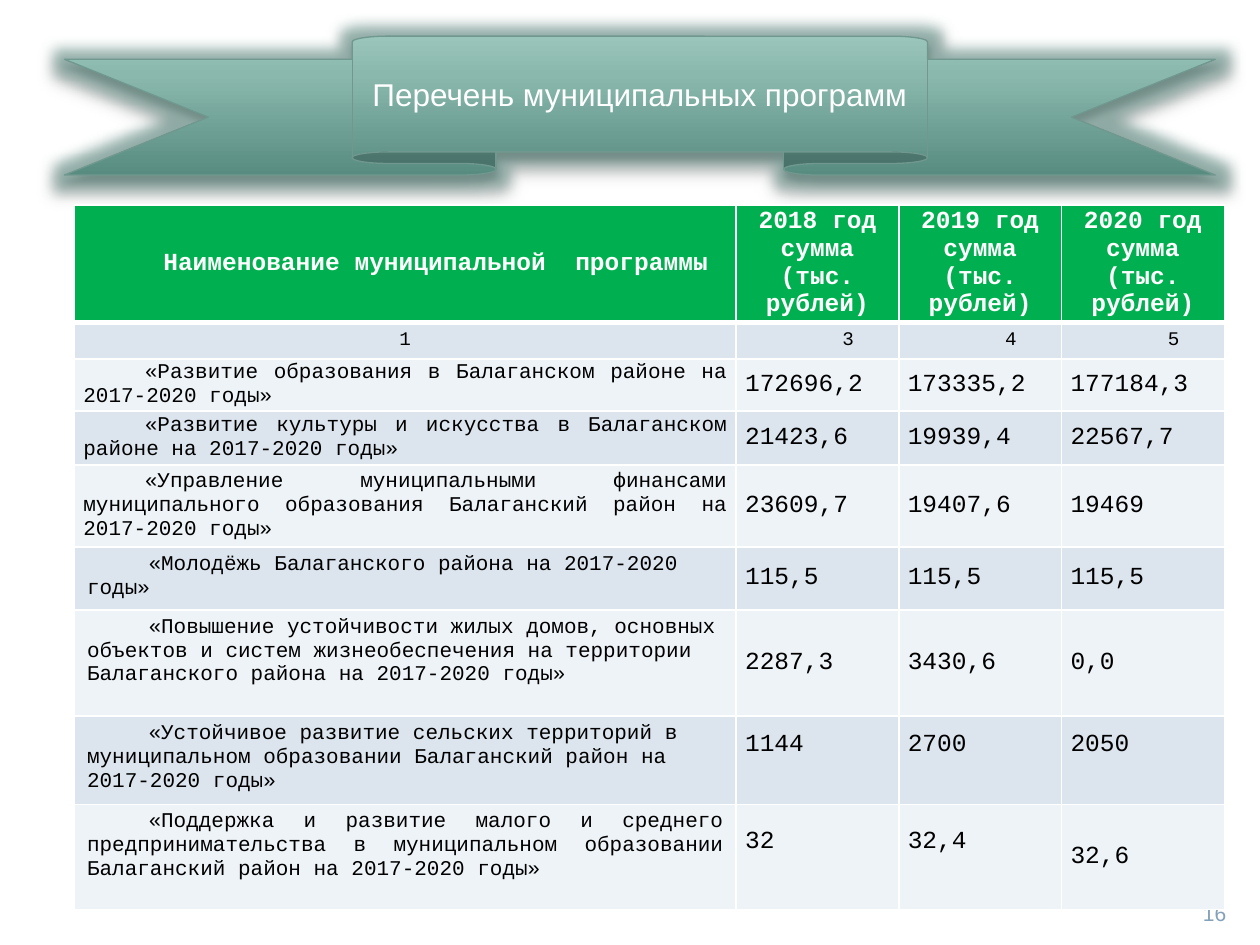
from copy import deepcopy

from lxml import etree
from pptx import Presentation
from pptx.dml.color import RGBColor
from pptx.enum.shapes import MSO_SHAPE
from pptx.enum.text import MSO_ANCHOR, PP_ALIGN
from pptx.oxml.ns import qn
from pptx.util import Cm, Pt

RIBBON = MSO_SHAPE.UP_RIBBON
TOP, MIDDLE, BOTTOM = MSO_ANCHOR.TOP, MSO_ANCHOR.MIDDLE, MSO_ANCHOR.BOTTOM
LEFT, CENTER, RIGHT, JUSTIFY = (
    PP_ALIGN.LEFT, PP_ALIGN.CENTER, PP_ALIGN.RIGHT, PP_ALIGN.JUSTIFY)

WHITE = RGBColor(0xFF, 0xFF, 0xFF)
BLACK = RGBColor(0x00, 0x00, 0x00)
GREEN = RGBColor(0x00, 0xB0, 0x50)
BAND_DARK = RGBColor(0xDC, 0xE5, 0xEE)
BAND_LIGHT = RGBColor(0xEE, 0xF3, 0xF7)
NUMBER_BLUE = RGBColor(0x83, 0xA1, 0xB9)
RIBBON_LINE = RGBColor(0x70, 0x98, 0x8E)
RIBBON_GLOW = RGBColor(0x58, 0x8C, 0x81)
RIBBON_STOPS = [(0, RGBColor(0x58, 0x8C, 0x81)),
                (0.72, RGBColor(0x8A, 0xB8, 0xAD)),
                (1, RGBColor(0x9A, 0xC5, 0xBA))]

SANS, MONO = "Arial", "Courier New"
INDENT = Cm(1.24)
COLUMN_WIDTHS = [13.34, 3.28, 3.28, 3.28]
HEADER_HEIGHT, NUMBERS_HEIGHT = 2.36, 0.73
HEADERS = ["Наименование муниципальной  программы",
           "2018 год сумма\n(тыс.\nрублей)",
           "2019 год\nсумма (тыс.\nрублей)",
           "2020 год\nсумма (тыс.\nрублей)"]
COLUMN_NUMBERS = ["1", "3", "4", "5"]

# height, alignment, whether the name sits at the top, name, sums by year
PROGRAMS = [
    (1.05, JUSTIFY, False,
     "«Развитие образования в Балаганском районе на 2017-2020 годы»",
     ["172696,2", "173335,2", "177184,3"]),
    (1.09, JUSTIFY, False,
     "«Развитие культуры и искусства в Балаганском районе на 2017-2020 годы»",
     ["21423,6", "19939,4", "22567,7"]),
    (1.65, JUSTIFY, False,
     "«Управление муниципальными финансами муниципального образования "
     "Балаганский район на 2017-2020 годы»",
     ["23609,7", "19407,6", "19469"]),
    (1.27, LEFT, True,
     "«Молодёжь Балаганского района на 2017-2020 годы»",
     ["115,5", "115,5", "115,5"]),
    (2.14, LEFT, True,
     "«Повышение устойчивости жилых домов, основных объектов и систем "
     "жизнеобеспечения на территории Балаганского района на 2017-2020 годы»",
     ["2287,3", "3430,6", "0,0"]),
    (1.77, LEFT, True,
     "«Устойчивое развитие сельских территорий в муниципальном образовании "
     "Балаганский район на 2017-2020 годы»",
     ["1144", "2700", "2050"]),
    (2.12, JUSTIFY, True,
     "«Поддержка и развитие малого и среднего предпринимательства в "
     "муниципальном образовании Балаганский район на 2017-2020 годы»",
     ["32", "32,4", "32,6"]),
]
RAISED_SUMS = {"1144", "2700", "2050", "32", "32,4"}


def write_text(frame, text, *, size, color, font=MONO, bold=False,
               align=LEFT, indent=0):
    """Fill a text frame, one paragraph for each line of text."""
    for index, line in enumerate(text.split("\n")):
        para = frame.add_paragraph() if index else frame.paragraphs[0]
        para.alignment = align
        if indent:
            properties = para._p.get_or_add_pPr()
            properties.set("marL", "0")
            properties.set("indent", str(int(indent)))
        span = para.add_run()
        span.text = line
        span.font.name, span.font.size = font, Pt(size)
        span.font.bold, span.font.color.rgb = bold, color


def add_effect(parent, tag, color, alpha, **attributes):
    effect = etree.SubElement(parent, qn(tag), attributes)
    tint = etree.SubElement(effect, qn("a:srgbClr"), val=str(color))
    etree.SubElement(tint, qn("a:alpha"), val=str(alpha * 1000))


def set_border(cell, side, width):
    line = etree.SubElement(cell._tc.get_or_add_tcPr(), qn(f"a:ln{side}"),
                            w=str(int(Pt(width))))
    fill = etree.SubElement(line, qn("a:solidFill"))
    etree.SubElement(fill, qn("a:srgbClr"), val=str(WHITE))


class ProgramPage:
    def __init__(self, deck):
        self.page = deck.slides.add_slide(deck.slide_layouts[6])

    def slide_number(self, text, left, top, width, height):
        box = self.page.shapes.add_textbox(
            Cm(left), Cm(top), Cm(width), Cm(height))
        frame = box.text_frame
        frame.word_wrap = True
        frame.vertical_anchor = BOTTOM
        frame.margin_top = frame.margin_bottom = 0
        write_text(frame, text, size=12, color=NUMBER_BLUE, font=SANS,
                   align=RIGHT)

    def title_ribbon(self, text, left, top, width, height):
        ribbon = self.page.shapes.add_shape(
            RIBBON, Cm(left), Cm(top), Cm(width), Cm(height))
        ribbon.adjustments[0], ribbon.adjustments[1] = 0.16667, 0.5
        ribbon.fill.gradient()
        ribbon.fill.gradient_angle = 90
        stop_list = ribbon._element.spPr.find(".//" + qn("a:gsLst"))
        stop_list.append(deepcopy(stop_list[0]))
        for stop, (position, color) in zip(ribbon.fill.gradient_stops,
                                           RIBBON_STOPS):
            stop.position, stop.color.rgb = position, color
        ribbon.line.color.rgb, ribbon.line.width = RIBBON_LINE, Pt(0.75)
        ribbon.shadow.inherit = False
        effects = ribbon._element.spPr.find(qn("a:effectLst"))
        add_effect(effects, "a:glow", RIBBON_GLOW, 50, rad=str(int(Pt(14))))
        add_effect(effects, "a:outerShdw", BLACK, 43, blurRad=str(int(Pt(4))),
                   dist=str(int(Pt(3))), dir="5400000", rotWithShape="0")
        frame = ribbon.text_frame
        frame.word_wrap = True
        frame.vertical_anchor = MIDDLE
        write_text(frame, text, size=18, color=WHITE, font=SANS, align=CENTER)

    def table(self, left, top, widths, heights):
        grid = self.page.shapes.add_table(
            len(heights), len(widths), Cm(left), Cm(top),
            Cm(sum(widths)), Cm(sum(heights))).table
        for column, width in zip(grid.columns, widths):
            column.width = Cm(width)
        for row, height in zip(grid.rows, heights):
            row.height = Cm(height)
        return grid

    def cell(self, grid, row, column, text, *, anchor=MIDDLE, lift=0, **style):
        """Write one cell; lift is the space kept free below the text."""
        cell = grid.cell(row, column)
        borders = {"L": 1, "R": 1, "T": 3 if row == 1 else 1,
                   "B": 3 if row == 0 else 1}
        for side, width in borders.items():
            set_border(cell, side, width)
        cell.fill.solid()
        band = BAND_DARK if row % 2 else BAND_LIGHT
        cell.fill.fore_color.rgb = band if row else GREEN
        cell.vertical_anchor = anchor
        if anchor == MIDDLE:
            cell.margin_left = cell.margin_right = Cm(0.18)
            cell.margin_top, cell.margin_bottom = 0, Cm(lift)
        write_text(cell.text_frame, text, **style)


def main():
    deck = Presentation()
    deck.slide_width, deck.slide_height = Cm(25.4), Cm(19.05)
    sheet = ProgramPage(deck)
    sheet.slide_number("16", 22.86, 17.98, 2.11, 0.69)
    sheet.title_ribbon("Перечень муниципальных программ",
                       1.3, 0.73, 23.2, 2.8)
    heights = [HEADER_HEIGHT, NUMBERS_HEIGHT] + [item[0] for item in PROGRAMS]
    grid = sheet.table(1.5, 4.13, COLUMN_WIDTHS, heights)
    for column, (header, number) in enumerate(zip(HEADERS, COLUMN_NUMBERS)):
        sheet.cell(grid, 0, column, header, size=14, color=WHITE, bold=True,
                   align=CENTER, indent=0 if column else INDENT)
        sheet.cell(grid, 1, column, number, size=11, color=BLACK,
                   align=CENTER, indent=INDENT if column else 0)
    for row, (_, align, at_top, name, sums) in enumerate(PROGRAMS, start=2):
        sheet.cell(grid, row, 0, name, anchor=TOP if at_top else MIDDLE,
                   size=12, color=BLACK, align=align, indent=INDENT)
        for column, amount in enumerate(sums, start=1):
            sheet.cell(grid, row, column, amount, size=14, color=BLACK,
                       align=JUSTIFY,
                       lift=0.61 if amount in RAISED_SUMS else 0)
    deck.save("out.pptx")


if __name__ == "__main__":
    main()
